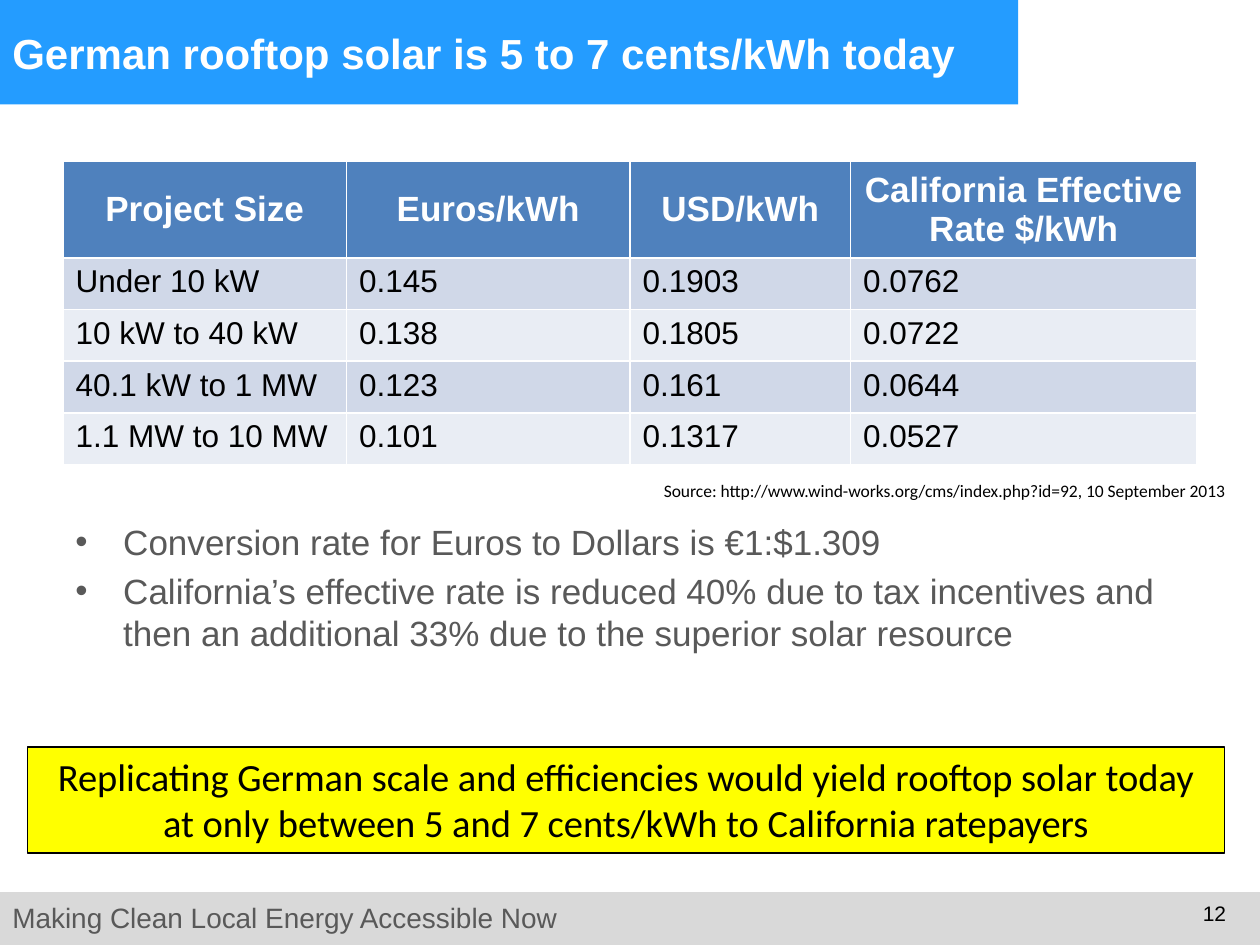
"""Build the slide on German rooftop solar prices."""
from lxml import etree
from pptx import Presentation
from pptx.dml.color import RGBColor
from pptx.enum import shapes, text
from pptx.oxml import ns
from pptx.util import Inches, Pt

WHITE = RGBColor(0xFF, 0xFF, 0xFF)
BLACK = RGBColor(0, 0, 0)
GRAY = RGBColor(0x59, 0x59, 0x59)
FOOTER_GRAY = RGBColor(0xD9, 0xD9, 0xD9)
TITLE_BLUE = RGBColor(0x24, 0x9C, 0xFF)
HEADER_BLUE = RGBColor(0x4F, 0x81, 0xBD)
BANDS = RGBColor(0xD0, 0xD8, 0xE8), RGBColor(0xE9, 0xED, 0xF4)
YELLOW = RGBColor(0xFF, 0xFF, 0)

TITLE = "German rooftop solar is 5 to 7 cents/kWh today"
FOOTER = "Making Clean Local Energy Accessible Now"
PAGE = "12"
RATES = [
    ("Project Size", "Euros/kWh", "USD/kWh", "California Effective Rate $/kWh"),
    ("Under 10 kW", "0.145", "0.1903", "0.0762"),
    ("10 kW to 40 kW", "0.138", "0.1805", "0.0722"),
    ("40.1 kW to 1 MW", "0.123", "0.161", "0.0644"),
    ("1.1 MW to 10 MW", "0.101", "0.1317", "0.0527"),
]
COLUMN_WIDTHS = (2.25, 2.25, 1.75, 2.75)
HEADER_HEIGHT, ROW_HEIGHT = 0.71, 0.41
SOURCE = "Source: http://www.wind-works.org/cms/index.php?id=92, 10 September 2013"
NOTES = [
    "Conversion rate for Euros to Dollars is €1:$1.309",
    "California’s effective rate is reduced 40% due to tax incentives and "
    "then an additional 33% due to the superior solar resource",
]
CONCLUSION = ("Replicating German scale and efficiencies would yield rooftop solar today "
              "at only between 5 and 7 cents/kWh to California ratepayers")


def write(frame, *lines, size, color=BLACK, font="Arial", bold=False,
          align=text.PP_ALIGN.LEFT, anchor=text.MSO_ANCHOR.TOP, bullet=None):
    frame.word_wrap = True
    frame.vertical_anchor = anchor
    for i, line in enumerate(lines):
        paragraph = frame.add_paragraph() if i else frame.paragraphs[0]
        paragraph.text = line
        paragraph.alignment = align
        if bullet:
            props = paragraph._p.get_or_add_pPr()
            props.set("marL", str(Inches(0.38)))
            props.set("indent", str(-Inches(0.38)))
            etree.SubElement(props, ns.qn("a:buFont"), typeface=font)
            etree.SubElement(props, ns.qn("a:buChar"), char=bullet)
        if i:
            paragraph.space_before = Pt(size * 0.2)
        paragraph.font.size = Pt(size)
        paragraph.font.name = font
        paragraph.font.bold = bold
        paragraph.font.color.rgb = color


def add_bar(slide, box, fill, line=None):
    bar = slide.shapes.add_shape(shapes.MSO_SHAPE.RECTANGLE, *map(Inches, box))
    bar.shadow.inherit = False
    bar.fill.solid()
    bar.fill.fore_color.rgb = fill
    if line is None:
        bar.line.fill.background()
    else:
        bar.line.color.rgb = line
        bar.line.width = Pt(0.75)
    return bar.text_frame


def add_text(slide, box, *lines, **style):
    write(slide.shapes.add_textbox(*map(Inches, box)).text_frame, *lines, **style)


def add_rates(slide, left, top):
    height = HEADER_HEIGHT + ROW_HEIGHT * (len(RATES) - 1)
    box = left, top, sum(COLUMN_WIDTHS), height
    rates = slide.shapes.add_table(len(RATES), len(COLUMN_WIDTHS), *map(Inches, box)).table
    for column, width in zip(rates.columns, COLUMN_WIDTHS):
        column.width = Inches(width)
    for r, values in enumerate(RATES):
        rates.rows[r].height = Inches(ROW_HEIGHT if r else HEADER_HEIGHT)
        for c, value in enumerate(values):
            cell = rates.cell(r, c)
            cell.fill.solid()
            cell.fill.fore_color.rgb = BANDS[(r - 1) % 2] if r else HEADER_BLUE
            if r:
                write(cell.text_frame, value, size=18)
            else:
                write(cell.text_frame, value, size=20, color=WHITE, bold=True,
                      align=text.PP_ALIGN.CENTER)
                cell.vertical_anchor = text.MSO_ANCHOR.MIDDLE


def main():
    deck = Presentation()
    deck.slide_width, deck.slide_height = Inches(10), Inches(7.5)
    slide = deck.slides.add_slide(deck.slide_layouts[6])
    add_bar(slide, (0, 7.08, 10, 0.42), FOOTER_GRAY)
    add_text(slide, (0, 7.1, 5.17, 0.37), FOOTER, size=16, color=GRAY)
    add_bar(slide, (0, 0, 8.08, 0.83), TITLE_BLUE)
    add_text(slide, (9.33, 7.1, 0.5, 0.4), PAGE, size=12, align=text.PP_ALIGN.RIGHT)
    add_text(slide, (0, 0, 8, 0.83), TITLE, size=24, color=WHITE, bold=True,
             anchor=text.MSO_ANCHOR.MIDDLE)
    add_rates(slide, 0.5, 1.28)
    add_text(slide, (0.5, 4.08, 9, 1.61), *NOTES, size=20, color=GRAY, bullet="•")
    add_text(slide, (5.17, 3.76, 4.83, 0.27), SOURCE, size=10, font="Calibri")
    conclusion = add_bar(slide, (0.22, 5.93, 9.5, 0.84), YELLOW, line=BLACK)
    write(conclusion, CONCLUSION, size=22, font="Calibri", align=text.PP_ALIGN.CENTER)
    deck.save("out.pptx")


if __name__ == "__main__":
    main()
